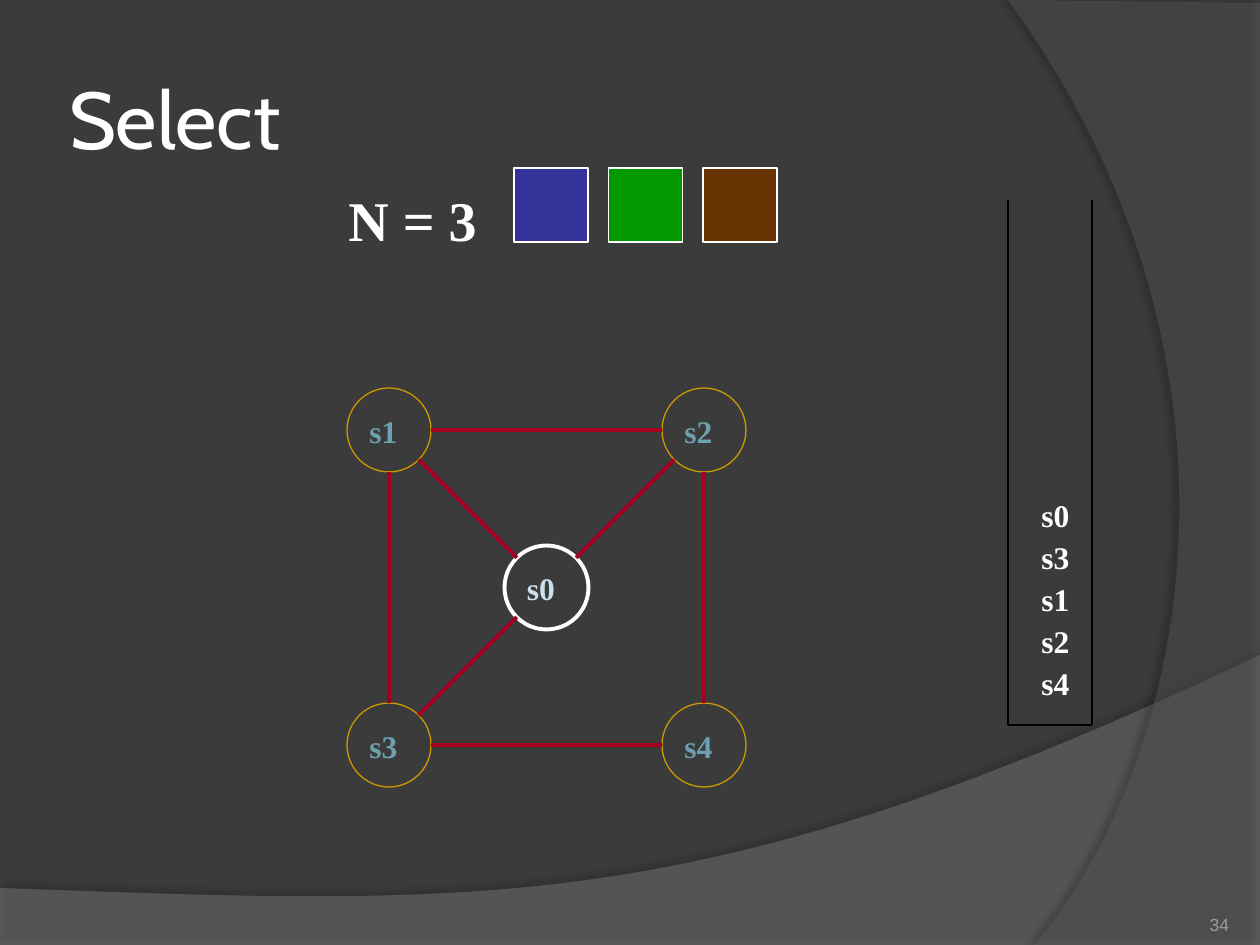
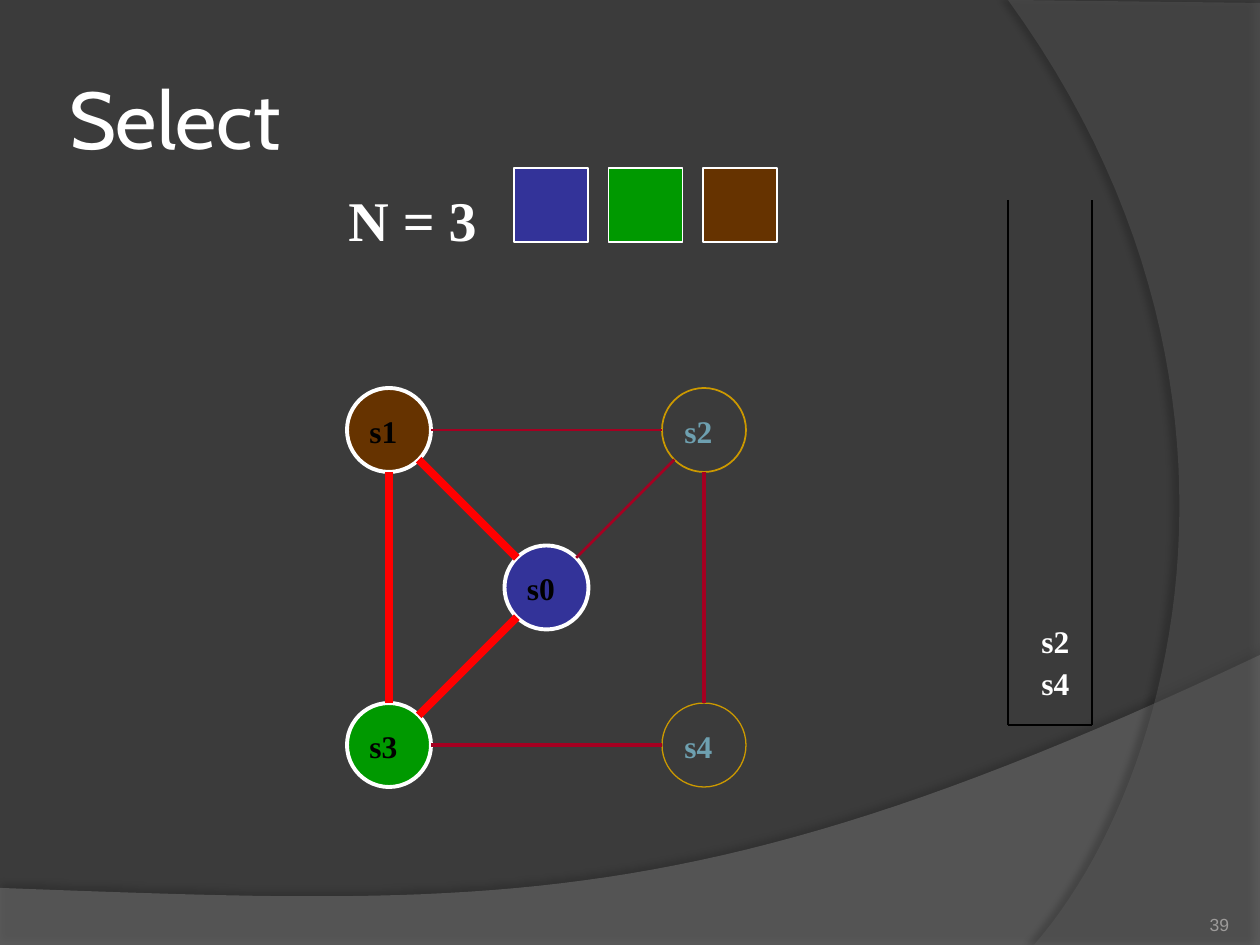
import math

import lxml.etree
import pptx
import pptx.dml.color
import pptx.enum.dml
import pptx.enum.shapes
import pptx.enum.text
import pptx.oxml.ns
import pptx.util

PX_PER_INCH = 126
COLOURS = {
    "page": "3B3B3B", "wave": "7F7F7F", "arc": "5E5E5E",
    "white": "FFFFFF", "black": "000000", "number": "9D9B9A",
    "gold": "CC9900", "teal": "6EA0B0", "pale": "CBE0ED",
    "crimson": "A50021", "red": "FF0000",
    "blue": "333399", "green": "009900", "brown": "663300",
}
SERIF = {"name": "Times New Roman", "bold": True}
FONTS = {
    "title": {"name": "Cabin", "size": pptx.util.Pt(46)},
    "number": {"name": "Arial", "size": pptx.util.Pt(10)},
    "heading": {**SERIF, "size": pptx.util.Pt(32)},
    "label": {**SERIF, "size": pptx.util.Pt(18)},
}
MIDDLE = pptx.enum.text.MSO_ANCHOR.MIDDLE
LABEL_FRAME = {
    "word_wrap": False,
    "vertical_anchor": MIDDLE,
    "auto_size": pptx.enum.text.MSO_AUTO_SIZE.SHAPE_TO_FIT_TEXT,
}
SIDES = ("left", "top", "right", "bottom")

TITLE_BOX = (63, 38, 1029, 158)
NUMBER_BOX = (1124, 885, 105, 50)
WAVE_BOX = (0, 655, 1260, 290)
ARC_BOX = (1008, 0, 252, 945)
HEADING_BOX = (336, 180, 154, 79)
PALETTE_BOX = (514, 168, 263, 74)
GRAPH_BOX = (347, 388, 399, 399)
STACK_BOX = (1008, 200, 84, 525)

NODE_SIZE = 84
LABEL_SIZE = 63
SWATCHES = ("blue", "green", "brown")
NODE_GRID = {"s1": (0, 0), "s2": (1, 0), "s3": (0, 1), "s4": (1, 1), "s0": (0.5, 0.5)}
IDLE_NODE = (None, "gold", 0.75, "teal")
IDLE_EDGE = ("crimson", 2.25)
THIN_EDGE = ("crimson", 1.5)
SPILLED_EDGE = ("red", 4.5)
EDGES = (("s1", "s2"), ("s0", "s2"), ("s1", "s0"), ("s1", "s3"),
         ("s3", "s4"), ("s2", "s4"), ("s3", "s0"))

STEPS = (
    {
        "number": "34",
        "stack": ("s4", "s2", "s1", "s3", "s0"),
        "nodes": {"s0": (None, "white", 2.25, "pale")},
        "edges": {},
    },
    {
        "number": "39",
        "stack": ("s4", "s2"),
        "nodes": {
            "s0": ("blue", "white", 2.25, "black"),
            "s1": ("brown", "white", 2.25, "black"),
            "s3": ("green", "white", 2.25, "black"),
            "s2": (None, "gold", 1, "teal"),
        },
        "edges": {
            ("s1", "s2"): THIN_EDGE,
            ("s0", "s2"): THIN_EDGE,
            ("s1", "s0"): SPILLED_EDGE,
            ("s1", "s3"): SPILLED_EDGE,
            ("s3", "s0"): SPILLED_EDGE,
        },
    },
)


def px(length):
    return pptx.util.Emu(round(length * pptx.util.Inches(1) / PX_PER_INCH))


def colour(name):
    return pptx.dml.color.RGBColor.from_string(COLOURS[name])


def assign(target, values):
    for name, value in values.items():
        setattr(target, name, value)


def paint(fill, name):
    if name is None:
        fill.background()
    else:
        fill.solid()
        fill.fore_color.rgb = colour(name)


def stroke(line, name, width):
    paint(line.fill, name)
    line.width = pptx.util.Pt(width)


def add_text(page, box, text, font, ink, frame_format, align=None):
    frame = page.shapes.add_textbox(*map(px, box)).text_frame
    assign(frame, frame_format)
    para = frame.paragraphs[0]
    para.alignment = align
    span = para.add_run()
    span.text = text
    assign(span.font, FONTS[font])
    span.font.color.rgb = colour(ink)


def insets(length):
    return {f"margin_{side}": px(length) for side in SIDES}


def add_shape(page, kind, box, fill, line, width):
    shape = page.shapes.add_shape(kind, *map(px, box))
    shape.shadow.inherit = False
    paint(shape.fill, fill)
    stroke(shape.line, line, width)


def add_line(page, start, end, ink, width):
    line = page.shapes.add_connector(
        pptx.enum.shapes.MSO_CONNECTOR.STRAIGHT, *map(px, (*start, *end)))
    stroke(line.line, ink, width)
    add_child(line._element.spPr, "a:effectLst")


def add_child(parent, tag, **values):
    child = lxml.etree.SubElement(parent, pptx.oxml.ns.qn(tag))
    for name, value in values.items():
        child.set(name, str(value))
    return child


def curve(controls, steps=48):
    points = []
    for step in range(1, steps + 1):
        t = step / steps
        weights = [math.comb(3, i) * t ** i * (1 - t) ** (3 - i) for i in range(4)]
        points.append(tuple(sum(w * c[axis] for w, c in zip(weights, controls))
                            for axis in (0, 1)))
    return points


def add_band(page, box, corners, controls, ink, opacity, shadow):
    left, top = box[:2]
    outline = [(px(left + x), px(top + y)) for x, y in corners + curve(controls)]
    builder = page.shapes.build_freeform(*outline[0], scale=1.0)
    builder.add_line_segments(outline[1:], close=True)
    band = builder.convert_to_shape()
    paint(band.fill, ink)
    band.line.fill.background()
    band.shadow.inherit = False
    properties = band._element.spPr
    tint = properties.find(pptx.oxml.ns.qn("a:solidFill"))[0]
    add_child(tint, "a:alpha", val=opacity * 1000)
    blur, distance, angle, strength = shadow
    cast = add_child(
        properties.find(pptx.oxml.ns.qn("a:effectLst")), "a:outerShdw",
        blurRad=pptx.util.Pt(blur), dist=pptx.util.Pt(distance),
        dir=angle * 60000, algn="ctr", rotWithShape=0)
    shade = add_child(cast, "a:srgbClr", val=COLOURS["black"])
    add_child(shade, "a:alpha", val=strength * 1000)


def add_wave(page, box):
    width, height = box[2:]
    corners = [(0, 233), (0, height), (width, height), (width, 0)]
    controls = [(width, 0), (704, 264), (493, 251), (0, 233)]
    add_band(page, box, corners, controls, "wave", 45, (4, 3.5, 270, 35))


def add_arc(page, box):
    width, height = box[2:]
    corners = [(width, 3), (width, height), (26, height)]
    controls = [(26, height), (170, 780), (275, 378), (0, 0)]
    add_band(page, box, corners, controls, "arc", 40, (4, 4, 180, 45))


def add_palette(page, box):
    left, top, width, size = box
    pitch = (width - size) / (len(SWATCHES) - 1)
    for index, name in enumerate(SWATCHES):
        add_shape(page, pptx.enum.shapes.MSO_SHAPE.RECTANGLE,
                  (left + index * pitch, top, size, size), name, "white", 0.75)


def add_label(page, left, top, text, ink):
    add_text(page, (left, top, LABEL_SIZE, LABEL_SIZE), text, "label", ink, LABEL_FRAME)


def add_graph(page, box, nodes, edges):
    left, top, width, height = box
    radius = NODE_SIZE / 2
    centres = {}
    for name, (column, row) in NODE_GRID.items():
        x = left + column * (width - NODE_SIZE)
        y = top + row * (height - NODE_SIZE)
        centres[name] = (x + radius, y + radius)
        fill, ring, ring_width, ink = nodes.get(name, IDLE_NODE)
        add_shape(page, pptx.enum.shapes.MSO_SHAPE.OVAL,
                  (x, y, NODE_SIZE, NODE_SIZE), fill, ring, ring_width)
        add_label(page, x + 10, y + 11, name, ink)
    for edge in EDGES:
        (x1, y1), (x2, y2) = (centres[name] for name in edge)
        reach = radius / math.hypot(x2 - x1, y2 - y1)
        dx, dy = (x2 - x1) * reach, (y2 - y1) * reach
        add_line(page, (x1 + dx, y1 + dy), (x2 - dx, y2 - dy),
                 *edges.get(edge, IDLE_EDGE))


def add_stack(page, box, names):
    left, top, width, height = box
    right, bottom = left + width, top + height
    for level, name in enumerate(names):
        add_label(page, left + 21, bottom - 74 - 42 * level, name, "white")
    walls = [(left, top), (left, bottom), (right, bottom), (right, top)]
    for start, end in zip(walls, walls[1:]):
        add_line(page, start, end, "black", 0.75)


def add_select_page(deck, step):
    page = deck.slides.add_slide(deck.slide_layouts[6])
    add_wave(page, WAVE_BOX)
    add_arc(page, ARC_BOX)
    add_text(page, NUMBER_BOX, step["number"], "number", "number",
             {"word_wrap": True, "vertical_anchor": pptx.enum.text.MSO_ANCHOR.BOTTOM,
              **insets(0)}, pptx.enum.text.PP_ALIGN.RIGHT)
    add_text(page, TITLE_BOX, "Select", "title", "white",
             {"word_wrap": True, "vertical_anchor": MIDDLE, **insets(6)})
    add_graph(page, GRAPH_BOX, step["nodes"], step["edges"])
    add_text(page, HEADING_BOX, "N = 3", "heading", "white", LABEL_FRAME)
    add_palette(page, PALETTE_BOX)
    add_stack(page, STACK_BOX, step["stack"])


def main():
    deck = pptx.Presentation()
    assign(deck, {"slide_width": px(1260), "slide_height": px(945)})
    paint(deck.slide_master.background.fill, "page")
    for step in STEPS:
        add_select_page(deck, step)
    deck.save("out.pptx")


if __name__ == "__main__":
    main()
